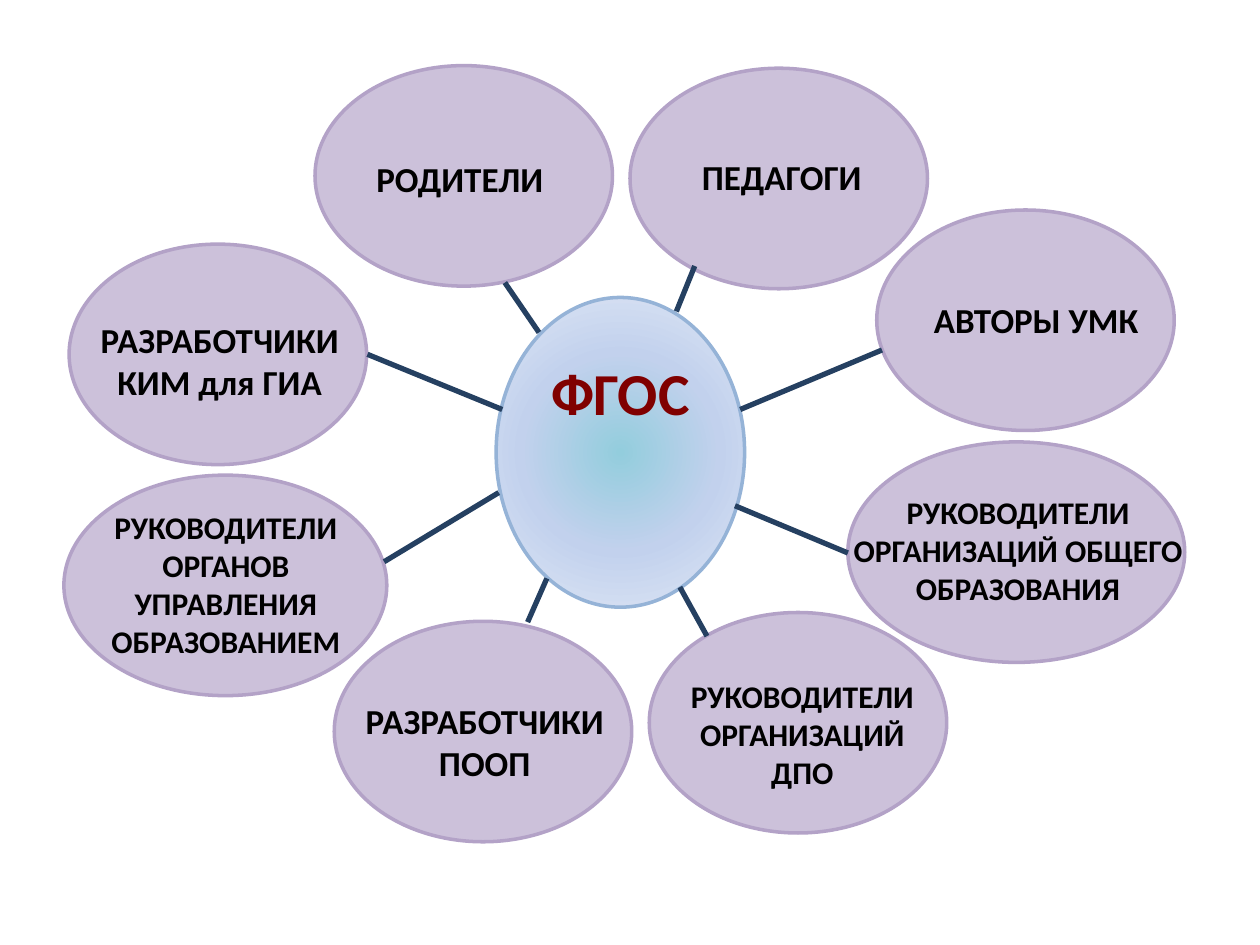
from dataclasses import dataclass
from typing import NamedTuple

from pptx import Presentation
from pptx.dml.color import RGBColor
from pptx.enum.shapes import MSO_CONNECTOR, MSO_SHAPE
from pptx.enum.text import MSO_ANCHOR, MSO_AUTO_SIZE, PP_ALIGN
from pptx.oxml import parse_xml
from pptx.oxml.ns import nsdecls, qn
from pptx.shapes.autoshape import Shape
from pptx.slide import Slide
from pptx.util import Pt


@dataclass(frozen=True)
class Theme:
    font: str = "Calibri"
    title_size: float = 34
    large: float = 20
    small: float = 18
    outline: float = 2
    spoke: float = 3
    title_color: str = "800000"
    text_color: str = "000000"
    oval_fill: str = "CCC1DA"
    oval_line: str = "B3A2C7"
    hub_line: str = "95B3D7"
    hub_stops: tuple = ((0, "93CDDD"), (50, "C2D1ED"), (100, "E1E8F5"))
    spoke_color: str = "254061"


THEME = Theme()


class Box(NamedTuple):
    left: float
    top: float
    width: float
    height: float

    def lengths(self) -> list:
        return [Pt(value) for value in self]


class Spoke(NamedTuple):
    x1: float
    y1: float
    x2: float
    y2: float


@dataclass(frozen=True)
class Stakeholder:
    text: str
    oval: Box
    label: Box
    size: float = THEME.large
    align: PP_ALIGN = PP_ALIGN.CENTER


OVAL_W, OVAL_H = 170, 126
LINE_H, TWO_LINES_H, THREE_LINES_H, FOUR_LINES_H = 31, 55, 50, 71.5

HUB = Box(283.5, 170, 142, 177)
HUB_LABEL = Box(280, 204.5, 149, 43)

STAKEHOLDERS = (
    Stakeholder("ПЕДАГОГИ", Box(360, 39, OVAL_W, OVAL_H),
                Box(394, 85.5, 106.5, LINE_H), align=PP_ALIGN.LEFT),
    Stakeholder("РАЗРАБОТЧИКИ КИМ для ГИА", Box(39.5, 139.5, OVAL_W, OVAL_H),
                Box(43, 178.5, 165, TWO_LINES_H)),
    Stakeholder("РУКОВОДИТЕЛИ ОРГАНОВ УПРАВЛЕНИЯ ОБРАЗОВАНИЕМ",
                Box(36.5, 271.5, 184.5, OVAL_H),
                Box(38, 298, 182, FOUR_LINES_H), THEME.small),
    Stakeholder("АВТОРЫ УМК", Box(501, 120, OVAL_W, OVAL_H),
                Box(526.5, 167, 134, LINE_H), align=PP_ALIGN.LEFT),
    Stakeholder("РОДИТЕЛИ", Box(180, 37.5, OVAL_W, OVAL_H),
                Box(208, 86.5, 111, LINE_H), align=PP_ALIGN.LEFT),
    Stakeholder("РАЗРАБОТЧИКИ ПООП", Box(191, 355, OVAL_W, OVAL_H),
                Box(194.5, 396, 165, TWO_LINES_H)),
    Stakeholder("РУКОВОДИТЕЛИ ОРГАНИЗАЦИЙ ОБЩЕГО ОБРАЗОВАНИЯ",
                Box(484.5, 252.5, 192.5, OVAL_H),
                Box(480, 278.5, 203.5, FOUR_LINES_H), THEME.small),
    Stakeholder("РУКОВОДИТЕЛИ ОРГАНИЗАЦИЙ ДПО", Box(371, 350, OVAL_W, OVAL_H),
                Box(376, 394.5, 165, THREE_LINES_H), THEME.small),
)

SPOKES = (
    Spoke(210, 202.5, 287, 234),
    Spoke(423, 234, 504, 200),
    Spoke(219.5, 321, 285, 281.5),
    Spoke(420, 289, 484.5, 316),
    Spoke(288.5, 161.5, 308, 190),
    Spoke(388.5, 335.5, 404, 363.5),
    Spoke(386.5, 178, 397, 152),
    Spoke(312.5, 330.5, 301.5, 355.5),
)


def write(shape: Shape, text: str, *, size: float, color: str = THEME.text_color,
          align: PP_ALIGN = PP_ALIGN.CENTER, anchor: MSO_ANCHOR = MSO_ANCHOR.MIDDLE,
          line_spacing: float = 1.0) -> None:
    frame = shape.text_frame
    frame.word_wrap = True
    frame.auto_size = MSO_AUTO_SIZE.NONE
    frame.vertical_anchor = anchor
    paragraph = frame.paragraphs[0]
    paragraph.alignment = align
    paragraph.line_spacing = line_spacing
    run = paragraph.add_run()
    run.text = text
    run.font.name = THEME.font
    run.font.size = Pt(size)
    run.font.bold = True
    run.font.color.rgb = RGBColor.from_string(color)


def add_oval(slide: Slide, box: Box, line_color: str) -> Shape:
    oval = slide.shapes.add_shape(MSO_SHAPE.OVAL, *box.lengths())
    oval.shadow.inherit = False
    oval.line.color.rgb = RGBColor.from_string(line_color)
    oval.line.width = Pt(THEME.outline)
    return oval


def fill_radially(shape: Shape, stops: tuple) -> None:
    """Fill with a circular gradient that starts at the centre."""
    shape.fill.gradient()
    properties = shape._element.spPr
    stop_xml = "".join(
        f'<a:gs pos="{percent * 1000}"><a:srgbClr val="{color}"/></a:gs>'
        for percent, color in stops)
    radial = parse_xml(
        f'<a:gradFill {nsdecls("a")} rotWithShape="1"><a:gsLst>{stop_xml}</a:gsLst>'
        '<a:path path="circle"><a:fillToRect l="50000" t="50000" r="50000" b="50000"/>'
        '</a:path></a:gradFill>')
    properties.replace(properties.find(qn("a:gradFill")), radial)


def add_hub(slide: Slide) -> None:
    fill_radially(add_oval(slide, HUB, THEME.hub_line), THEME.hub_stops)
    title = slide.shapes.title
    title.left, title.top, title.width, title.height = HUB_LABEL.lengths()
    write(title, "ФГОС", size=THEME.title_size, color=THEME.title_color,
          anchor=MSO_ANCHOR.TOP, line_spacing=0.9)
    # The title placeholder comes first in the tree; lift it above the hub.
    slide.shapes._spTree.append(title._element)


def add_stakeholder_oval(slide: Slide, stakeholder: Stakeholder) -> None:
    oval = add_oval(slide, stakeholder.oval, THEME.oval_line)
    oval.fill.solid()
    oval.fill.fore_color.rgb = RGBColor.from_string(THEME.oval_fill)


def add_stakeholder_label(slide: Slide, stakeholder: Stakeholder) -> None:
    label = slide.shapes.add_textbox(*stakeholder.label.lengths())
    write(label, stakeholder.text, size=stakeholder.size, align=stakeholder.align)


def add_spoke(slide: Slide, spoke: Spoke) -> None:
    connector = slide.shapes.add_connector(
        MSO_CONNECTOR.STRAIGHT, *(Pt(value) for value in spoke))
    connector.line.color.rgb = RGBColor.from_string(THEME.spoke_color)
    connector.line.width = Pt(THEME.spoke)
    connector._element.spPr.append(parse_xml(f'<a:effectLst {nsdecls("a")}/>'))


def main() -> None:
    presentation = Presentation()
    presentation.slide_width, presentation.slide_height = Pt(720), Pt(540)
    title_only = presentation.slide_layouts[5]
    slide = presentation.slides.add_slide(title_only)
    add_hub(slide)
    for stakeholder in STAKEHOLDERS:
        add_stakeholder_oval(slide, stakeholder)
    for stakeholder in STAKEHOLDERS:
        add_stakeholder_label(slide, stakeholder)
    for spoke in SPOKES:
        add_spoke(slide, spoke)
    presentation.save("out.pptx")


if __name__ == "__main__":
    main()
